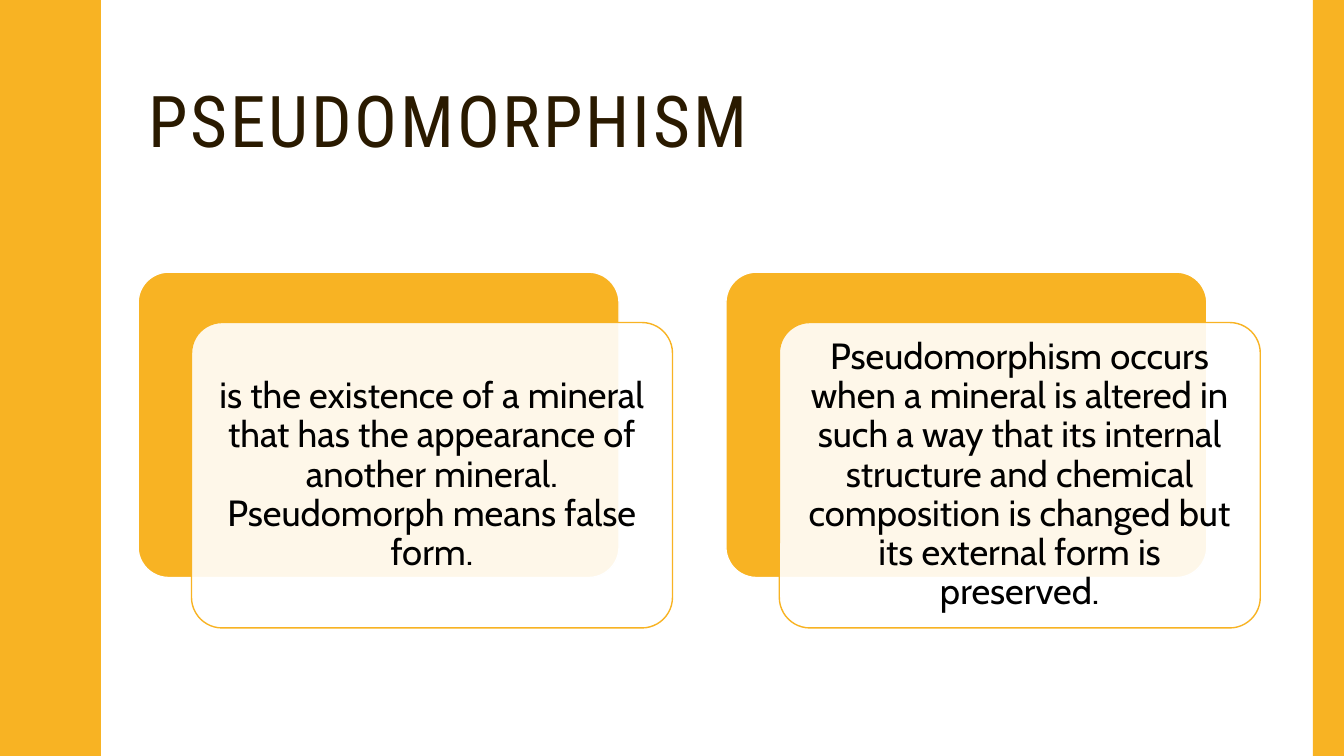
from lxml import etree
from pptx import Presentation
from pptx.dml.color import RGBColor
from pptx.enum.shapes import MSO_SHAPE
from pptx.enum.text import MSO_ANCHOR, MSO_AUTO_SIZE, PP_ALIGN
from pptx.oxml.ns import qn
from pptx.util import Inches, Pt

RECTANGLE = MSO_SHAPE.RECTANGLE
ROUNDED = MSO_SHAPE.ROUNDED_RECTANGLE
MIDDLE = MSO_ANCHOR.MIDDLE
NO_AUTOFIT = MSO_AUTO_SIZE.NONE
LEFT, CENTER = PP_ALIGN.LEFT, PP_ALIGN.CENTER

COLORS = {"gold": "F8B323", "brown": "2A1A00", "white": "FFFFFF", "black": "000000"}
TITLE_FONT = {"name": "Roboto Condensed", "size": Pt(51), "bold": False}
CARD_FONT = {"name": "Cabin", "size": Pt(26), "bold": False}

SLIDE_WIDTH, SLIDE_HEIGHT = 13.33, 7.5
WAVE_PERIOD = 1.5
WAVE_RISE = [
    (0.78, 0), (0.78, 0.07), (0.79, 0.14), (0.8, 0.2), (0.81, 0.25),
    (0.83, 0.29), (0.85, 0.33), (0.87, 0.38), (0.89, 0.42), (0.91, 0.46),
    (0.93, 0.5), (0.95, 0.55), (0.96, 0.61), (0.97, 0.68), (0.97, 0.75),
]
CARD_OFFSET = (0.53, 0.5)
CARD_TEXTS = [
    "is the existence of a mineral that has the appearance of another mineral. "
    "Pseudomorph means false form.",
    "Pseudomorphism occurs when a mineral is altered in such a way that its internal "
    "structure and chemical composition is changed but its external form is preserved.",
]


def rgb(name):
    """Return the named colour."""
    return RGBColor.from_string(COLORS[name])


def paint(shape, fill, line=None):
    """Give a shape a flat fill and an optional one-point outline."""
    shape.shadow.inherit = False
    shape.fill.solid()
    shape.fill.fore_color.rgb = rgb(fill)
    if line:
        shape.line.color.rgb = rgb(line)
        shape.line.width = Pt(1)
    else:
        shape.line.fill.background()


def write_text(shape, text, font, color, alignment):
    """Write one vertically centred paragraph and return its run."""
    frame = shape.text_frame
    frame.word_wrap = True
    frame.auto_size = NO_AUTOFIT
    frame.vertical_anchor = MIDDLE
    paragraph = frame.paragraphs[0]
    paragraph.alignment = alignment
    paragraph.line_spacing = 0.9
    run = paragraph.add_run()
    run.text = text
    for attribute, value in font.items():
        setattr(run.font, attribute, value)
    run.font.color.rgb = rgb(color)
    return run


def add_title(slide, left, top, width, height):
    """Place the letter-spaced title."""
    title = slide.shapes.title
    title.left, title.top = Inches(left), Inches(top)
    title.width, title.height = Inches(width), Inches(height)
    run = write_text(title, "PSEUDOMORPHISM", TITLE_FONT, "brown", LEFT)
    run._r.get_or_add_rPr().set("spc", "200")


def add_wave(slide, left, top, height):
    """Draw the wavy band along the left edge."""
    fall = [(x, WAVE_PERIOD - y) for x, y in reversed(WAVE_RISE[:-1])]
    edge = [
        (left + x, top + period * WAVE_PERIOD + y)
        for period in range(round(height / WAVE_PERIOD))
        for x, y in WAVE_RISE + fall
    ]
    builder = slide.shapes.build_freeform(left, top, scale=Inches(1))
    builder.add_line_segments(edge + [(left, top + height)], close=True)
    paint(builder.convert_to_shape(), "gold")


def add_bar(slide, left, top, width, height):
    """Draw the straight band along the right edge."""
    bar = slide.shapes.add_shape(
        RECTANGLE, Inches(left), Inches(top), Inches(width), Inches(height))
    paint(bar, "gold")


def add_card(slide, text, left, top, width, height):
    """Draw a gold panel with a translucent text panel shifted over it."""
    group = slide.shapes.add_group_shape()
    panels = []
    for step, fill, line in [(0, "gold", "white"), (1, "white", "gold")]:
        panel = group.shapes.add_shape(
            ROUNDED, Inches(left + step * CARD_OFFSET[0]),
            Inches(top + step * CARD_OFFSET[1]), Inches(width), Inches(height))
        panel.adjustments[0] = 0.1
        paint(panel, fill, line)
        panels.append(panel)
    front = panels[-1]
    fill_color = front._element.spPr.find(qn("a:solidFill"))[0]
    etree.SubElement(fill_color, qn("a:alpha")).set("val", "90000")
    for side in ("left", "top", "right", "bottom"):
        setattr(front.text_frame, f"margin_{side}", Inches(0.11))
    write_text(front, text, CARD_FONT, "black", CENTER)


def main():
    """Build and save the slide."""
    presentation = Presentation()
    presentation.slide_width = Inches(SLIDE_WIDTH)
    presentation.slide_height = Inches(SLIDE_HEIGHT)
    slide = presentation.slides.add_slide(presentation.slide_layouts[5])
    slide.background.fill.solid()
    slide.background.fill.fore_color.rgb = rgb("white")
    add_title(slide, 1.37, 0.42, 11.13, 1.63)
    add_wave(slide, 0, 0, SLIDE_HEIGHT)
    add_bar(slide, 13.02, 0, 0.31, SLIDE_HEIGHT)
    for index, text in enumerate(CARD_TEXTS):
        add_card(slide, text, 1.37 + index * 5.83, 2.7, 4.77, 3.03)
    presentation.save("out.pptx")


if __name__ == "__main__":
    main()
